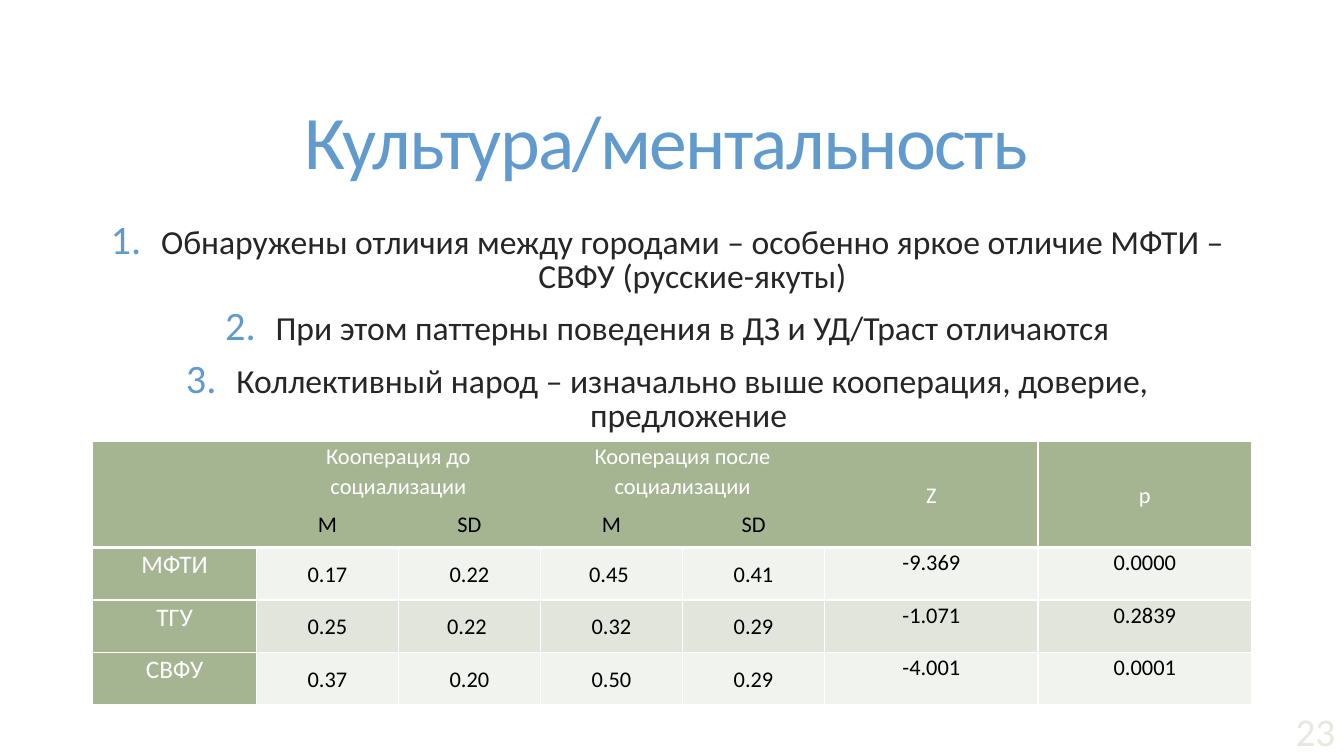
from dataclasses import dataclass

from lxml.etree import SubElement
from pptx import Presentation
from pptx.dml.color import RGBColor
from pptx.enum.text import MSO_ANCHOR, MSO_AUTO_SIZE, PP_ALIGN
from pptx.oxml.ns import qn
from pptx.slide import Slide
from pptx.table import Table, _Cell
from pptx.text.text import TextFrame, _Paragraph
from pptx.util import Cm, Pt

BLUE = RGBColor(0x61, 0x9A, 0xCD)
DARK = RGBColor(0x26, 0x26, 0x26)
BLACK = RGBColor(0, 0, 0)
WHITE = RGBColor(0xFF, 0xFF, 0xFF)
GREEN = RGBColor(0xA5, 0xB5, 0x92)
LIGHT_BAND = RGBColor(0xF0, 0xF3, 0xEE)
DARK_BAND = RGBColor(0xE1, 0xE5, 0xDC)
PALE = RGBColor(0xE7, 0xE8, 0xDF)


@dataclass(frozen=True)
class TextStyle:
    size: float
    color: RGBColor
    align: PP_ALIGN = PP_ALIGN.CENTER
    line_spacing: float = 1.0
    space_before: float = 0


TITLE = TextStyle(54, BLUE, line_spacing=0.85)
FINDING = TextStyle(24, DARK, line_spacing=0.85, space_before=13)
PAGE_NUMBER = TextStyle(28, PALE, align=PP_ALIGN.RIGHT)
HEADER = TextStyle(16, WHITE, line_spacing=1.07)
ROW_LABEL = TextStyle(18, WHITE, line_spacing=1.07)
VALUE = TextStyle(16, BLACK, line_spacing=1.07)

FINDINGS = (
    "Обнаружены отличия между городами – особенно яркое отличие МФТИ – СВФУ (русские-якуты)",
    "При этом паттерны поведения в ДЗ и УД/Траст отличаются",
    "Коллективный народ – изначально выше кооперация, доверие, предложение ",
)
ROWS = (
    ("", "Кооперация до социализации", "", "Кооперация после социализации", "", "Z", "p"),
    ("", "M", "SD", "M", "SD", "", ""),
    ("МФТИ", "0.17", "0.22", "0.45 ", "0.41", "-9.369", "0.0000"),
    ("ТГУ", "0.25", "0.22 ", "0.32", "0.29", "-1.071", "0.2839"),
    ("СВФУ", "0.37", "0.20", "0.50", "0.29", "-4.001", "0.0001"),
)
MERGES = (
    ((0, 0), (1, 0)),
    ((0, 1), (0, 2)),
    ((0, 3), (0, 4)),
    ((0, 5), (1, 5)),
    ((0, 6), (1, 6)),
)
COLUMN_WIDTHS = (4.12, *[3.58] * 4, 5.38, 5.38)
ROW_HEIGHTS = (1.22, 1.22, 1.32, 1.32, 1.32)
HEADER_ROWS = 2
Z_COLUMN = 5


def write(paragraph: _Paragraph, text: str, style: TextStyle) -> None:
    paragraph_format = {
        "alignment": style.align,
        "line_spacing": style.line_spacing,
        "space_before": Pt(style.space_before),
        "space_after": Pt(0),
    }
    for name, value in paragraph_format.items():
        setattr(paragraph, name, value)
    run = paragraph.add_run()
    run.text = text
    for name, value in {"name": "Calibri", "size": Pt(style.size)}.items():
        setattr(run.font, name, value)
    run.font.color.rgb = style.color


def number(paragraph: _Paragraph) -> None:
    """Give the paragraph a large blue automatic number with a hanging indent."""
    properties = paragraph._p.get_or_add_pPr()
    properties.set("marL", str(Cm(1.27)))
    properties.set("indent", str(-Cm(1.27)))
    bullet_color = SubElement(properties, qn("a:buClr"))
    SubElement(bullet_color, qn("a:srgbClr"), val=str(BLUE))
    SubElement(properties, qn("a:buSzPct"), val="120000")
    SubElement(properties, qn("a:buFont"), typeface="+mj-lt")
    SubElement(properties, qn("a:buAutoNum"), type="arabicPeriod")


def add_title(slide: Slide, text: str) -> None:
    title = slide.shapes.title
    box = {"left": Cm(1.83), "top": Cm(1.4), "width": Cm(29.92), "height": Cm(4.6)}
    for name, value in box.items():
        setattr(title, name, value)
    title.text_frame.auto_size = MSO_AUTO_SIZE.NONE
    title.text_frame.vertical_anchor = MSO_ANCHOR.MIDDLE
    paragraph = title.text_frame.paragraphs[0]
    write(paragraph, text, TITLE)
    paragraph.runs[0]._r.get_or_add_rPr().set("spc", "-120")


def add_text_box(slide: Slide, left: float, top: float, width: float, height: float) -> TextFrame:
    frame = slide.shapes.add_textbox(Cm(left), Cm(top), Cm(width), Cm(height)).text_frame
    frame.word_wrap = True
    return frame


def add_findings(slide: Slide) -> None:
    frame = add_text_box(slide, 1.88, 5.59, 29.87, 10.46)
    for index, finding in enumerate(FINDINGS):
        paragraph = frame.add_paragraph() if index else frame.paragraphs[0]
        write(paragraph, finding, FINDING)
        number(paragraph)


def edge_widths(row: int, column: int) -> dict[str, float]:
    """Border widths in points by side; the header keeps only its outer and Z/p lines."""
    if row >= HEADER_ROWS:
        return {"L": 1, "R": 1, "T": 3 if row == HEADER_ROWS else 1, "B": 1}
    return {
        "L": 1 if column in (0, Z_COLUMN + 1) else 0,
        "R": 1 if column >= Z_COLUMN else 0,
        "T": 1 if row == 0 else 0,
        "B": 3 if row == HEADER_ROWS - 1 or column in (0, Z_COLUMN, Z_COLUMN + 1) else 0,
    }


def draw_borders(cell: _Cell, widths: dict[str, float]) -> None:
    properties = cell._tc.get_or_add_tcPr()
    for side, width in widths.items():
        line = SubElement(properties, qn(f"a:ln{side}"), w=str(Pt(width)))
        if width:
            fill = SubElement(line, qn("a:solidFill"))
            SubElement(fill, qn("a:srgbClr"), val=str(WHITE))
        else:
            SubElement(line, qn("a:noFill"))


def format_cell(cell: _Cell, row: int, column: int) -> None:
    is_header = row < HEADER_ROWS
    is_middle = is_header or 0 < column < Z_COLUMN
    cell_format = {
        "margin_left": Cm(0.18),
        "margin_right": Cm(0.18),
        "margin_top": 0,
        "margin_bottom": 0,
        "vertical_anchor": MSO_ANCHOR.MIDDLE if is_middle else MSO_ANCHOR.TOP,
    }
    for name, value in cell_format.items():
        setattr(cell, name, value)
    draw_borders(cell, edge_widths(row, column))
    cell.fill.solid()
    band = DARK_BAND if row % 2 else LIGHT_BAND
    cell.fill.fore_color.rgb = GREEN if is_header or column == 0 else band


def cell_style(row: int, column: int) -> TextStyle:
    if row == 0:
        return HEADER
    return ROW_LABEL if column == 0 else VALUE


def add_results(slide: Slide) -> None:
    frame = slide.shapes.add_table(
        len(ROWS), len(COLUMN_WIDTHS), Cm(2.34), Cm(11.13),
        Cm(sum(COLUMN_WIDTHS)), Cm(sum(ROW_HEIGHTS)),
    )
    table: Table = frame.table
    for column, width in zip(table.columns, COLUMN_WIDTHS):
        column.width = Cm(width)
    for row, height in zip(table.rows, ROW_HEIGHTS):
        row.height = Cm(height)
    for first, last in MERGES:
        table.cell(*first).merge(table.cell(*last))
    for row_index, texts in enumerate(ROWS):
        for column_index, text in enumerate(texts):
            cell = table.cell(row_index, column_index)
            format_cell(cell, row_index, column_index)
            if text:
                style = cell_style(row_index, column_index)
                write(cell.text_frame.paragraphs[0], text, style)


def main() -> None:
    presentation = Presentation()
    presentation.slide_width, presentation.slide_height = Cm(33.87), Cm(19.05)
    slide = presentation.slides.add_slide(presentation.slide_layouts[5])
    add_title(slide, "Культура/ментальность")
    add_findings(slide)
    add_results(slide)
    page_frame = add_text_box(slide, 30.9, 17.7, 3, 1.35)
    write(page_frame.paragraphs[0], "23", PAGE_NUMBER)
    presentation.save("out.pptx")


if __name__ == "__main__":
    main()
